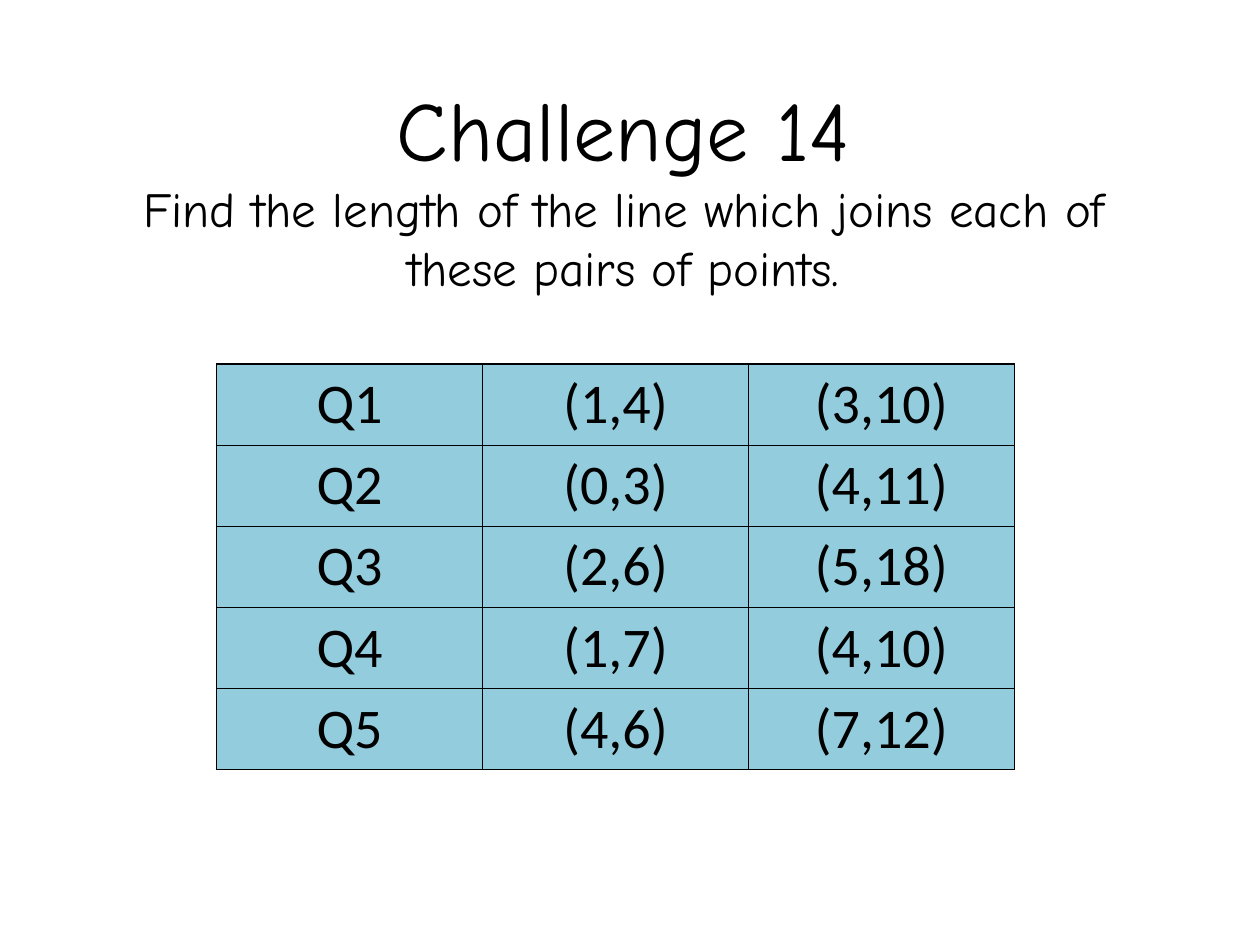
from lxml.etree import SubElement
from pptx import Presentation
from pptx.dml.color import RGBColor
from pptx.enum.text import MSO_ANCHOR, MSO_AUTO_SIZE, PP_ALIGN
from pptx.oxml.ns import qn
from pptx.util import Inches, Pt

COLORS = {"text": "000000", "cell": "93CDDD", "border": "000000"}
HEADING = [
    ("Challenge 14", 48),
    ("Find the length of the line which joins each of these pairs of points.", 28),
]
QUESTIONS = [
    ("Q1", "(1,4)", "(3,10)"),
    ("Q2", "(0,3)", "(4,11)"),
    ("Q3", "(2,6)", "(5,18)"),
    ("Q4", "(1,7)", "(4,10)"),
    ("Q5", "(4,6)", "(7,12)"),
]


def color(key):
    return RGBColor.from_string(COLORS[key])


def format_paragraph(paragraph, font_name, size):
    paragraph.alignment = PP_ALIGN.CENTER
    paragraph.font.name = font_name
    paragraph.font.size = Pt(size)
    paragraph.font.bold = False
    paragraph.font.color.rgb = color("text")


def add_borders(cell):
    properties = cell._tc.get_or_add_tcPr()
    for index, side in enumerate(("lnL", "lnR", "lnT", "lnB")):
        line = properties.makeelement(qn(f"a:{side}"), {"w": str(Pt(1))})
        fill = SubElement(line, qn("a:solidFill"))
        SubElement(fill, qn("a:srgbClr"), val=COLORS["border"])
        properties.insert(index, line)  # borders precede the cell fill


def place_heading(slide, left, top, width, height):
    heading = slide.shapes.title
    heading.left, heading.top = left, top
    heading.width, heading.height = width, height
    frame = heading.text_frame
    frame.word_wrap = True
    frame.auto_size = MSO_AUTO_SIZE.NONE
    frame.vertical_anchor = MSO_ANCHOR.MIDDLE
    frame.text = "\n".join(text for text, _ in HEADING)
    for paragraph, (_, size) in zip(frame.paragraphs, HEADING):
        format_paragraph(paragraph, "Comic Neue", size)


def place_questions(slide, left, top, width, height):
    questions = slide.shapes.add_table(
        len(QUESTIONS), len(QUESTIONS[0]), left, top, width, height
    ).table
    questions.first_row = False
    questions.horz_banding = False
    for row, texts in zip(questions.rows, QUESTIONS):
        for cell, text in zip(row.cells, texts):
            cell.text = text
            cell.fill.solid()
            cell.fill.fore_color.rgb = color("cell")
            add_borders(cell)
            format_paragraph(cell.text_frame.paragraphs[0], "Calibri", 32)


def main():
    deck = Presentation()
    deck.slide_width, deck.slide_height = Inches(10), Inches(7.5)
    slide = deck.slides.add_slide(deck.slide_layouts[5])  # title only

    # Challenge title and instruction
    place_heading(slide, Inches(0.62), Inches(0.47), Inches(8.66), Inches(2.03))
    # Pairs of points
    place_questions(slide, Inches(1.72), Inches(2.89), Inches(6.33), Inches(3.17))

    deck.save("out.pptx")


if __name__ == "__main__":
    main()
